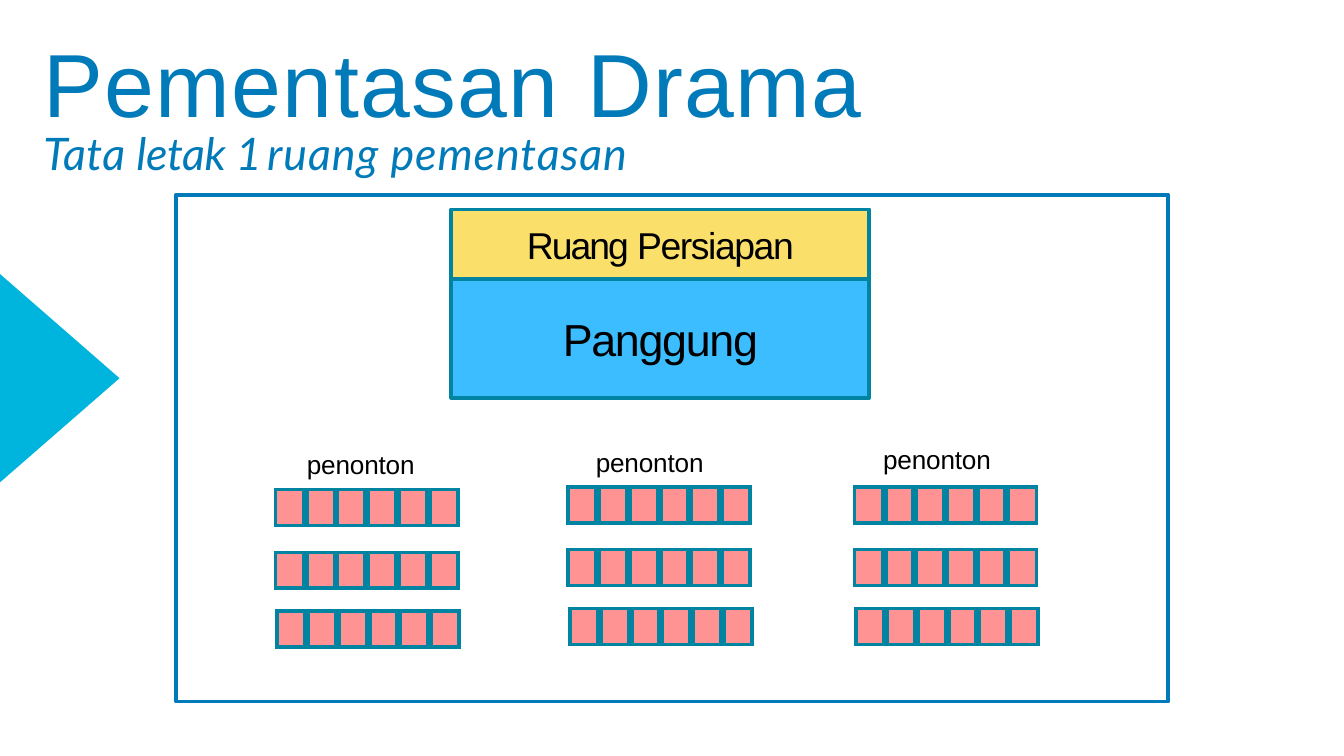
from lxml.etree import SubElement
from pptx import Presentation
from pptx.dml.color import RGBColor
from pptx.enum.shapes import MSO_SHAPE
from pptx.enum.text import MSO_ANCHOR, PP_ALIGN
from pptx.oxml.ns import qn
from pptx.util import Cm, Pt

BLUE = RGBColor(0x00, 0x7A, 0xB8)
CYAN = RGBColor(0x00, 0xB5, 0xDD)
TEAL = RGBColor(0x00, 0x84, 0xA1)
SKY = RGBColor(0x3B, 0xBD, 0xFF)
YELLOW = RGBColor(0xFA, 0xDF, 0x6A)
PINK = RGBColor(0xFF, 0x93, 0x93)
WHITE = RGBColor(0xFF, 0xFF, 0xFF)
BLACK = RGBColor(0x00, 0x00, 0x00)


class StageSlide:
    """Draws the elements of a theatre floor plan on one slide."""

    line_width = Pt(2)
    seat_widths = (0.56, 0.58, 0.58, 0.58, 0.58, 0.56)
    seat_height = 0.68
    outer_border = Pt(2.25)
    inner_border = Pt(4.25)

    def __init__(self, slide):
        self.slide = slide

    def fill_text(self, frame, runs, size, color, font="Arial", italic=False):
        paragraph = frame.paragraphs[0]
        paragraph.font.name = font
        paragraph.font.size = Pt(size)
        paragraph.font.italic = italic
        paragraph.font.color.rgb = color
        for text, spacing in runs:
            run = paragraph.add_run()
            run.text = text
            run._r.get_or_add_rPr().set("spc", str(round(spacing * 100)))
        return paragraph

    def text(self, left, top, width, height, runs, size, color, **style):
        shape = self.slide.shapes.add_textbox(Cm(left), Cm(top), Cm(width), Cm(height))
        frame = shape.text_frame
        frame.word_wrap = True
        frame.margin_left = Cm(0.03)
        frame.margin_top = Cm(0.06)
        frame.margin_right = frame.margin_bottom = 0
        self.fill_text(frame, runs, size, color, **style)

    def box(self, left, top, width, height, fill, line, runs=(), size=20):
        shape = self.slide.shapes.add_shape(
            MSO_SHAPE.RECTANGLE, Cm(left), Cm(top), Cm(width), Cm(height))
        shape.shadow.inherit = False
        shape.fill.solid()
        shape.fill.fore_color.rgb = fill
        shape.line.color.rgb = line
        shape.line.width = self.line_width
        if runs:
            frame = shape.text_frame
            frame.margin_left = frame.margin_top = 0
            frame.margin_right = frame.margin_bottom = 0
            frame.vertical_anchor = MSO_ANCHOR.MIDDLE
            self.fill_text(frame, runs, size, BLACK).alignment = PP_ALIGN.CENTER

    def arrow_tip(self, top, width, height, fill):
        builder = self.slide.shapes.build_freeform(Cm(0), Cm(top))
        builder.add_line_segments(
            [(Cm(0), Cm(top + height)), (Cm(width), Cm(top + height / 2))])
        shape = builder.convert_to_shape()
        shape.shadow.inherit = False
        shape.fill.solid()
        shape.fill.fore_color.rgb = fill
        shape.line.fill.background()

    def border(self, cell, side, width):
        line = SubElement(cell._tc.get_or_add_tcPr(), qn(f"a:ln{side}"), w=str(width))
        fill = SubElement(line, qn("a:solidFill"))
        SubElement(fill, qn("a:srgbClr"), val=str(TEAL))

    def seat_row(self, left, top):
        count = len(self.seat_widths)
        table = self.slide.shapes.add_table(
            1, count, Cm(left), Cm(top),
            Cm(sum(self.seat_widths)), Cm(self.seat_height)).table
        table.first_row = table.horz_banding = False
        for index, width in enumerate(self.seat_widths):
            table.columns[index].width = Cm(width)
            cell = table.cell(0, index)
            cell.margin_left = cell.margin_right = 0
            cell.margin_top = cell.margin_bottom = 0
            self.border(cell, "L", self.inner_border if index else self.outer_border)
            self.border(
                cell, "R",
                self.inner_border if index < count - 1 else self.outer_border)
            self.border(cell, "T", self.outer_border)
            self.border(cell, "B", self.outer_border)
            cell.fill.solid()
            cell.fill.fore_color.rgb = PINK
            SubElement(cell.text_frame.paragraphs[0]._p, qn("a:endParaRPr"), sz="1000")


def main():
    presentation = Presentation()
    presentation.slide_width = Cm(25.4)
    presentation.slide_height = Cm(14.29)
    stage = StageSlide(presentation.slides.add_slide(presentation.slide_layouts[6]))

    stage.arrow_tip(5.18, 2.26, 3.94, CYAN)
    stage.text(0.79, 0.46, 15.52, 2.11,
               [("Pementasan ", 0.8), ("Drama", 0.7)], 48, BLUE)
    stage.text(0.79, 2.31, 11.99, 1.09,
               [("Tata ", 0.2), ("letak ", -0.2), ("1 ", -2.8),
                ("ruang pementasan", 0.5)],
               24, BLUE, font="Lato", italic=True)
    stage.box(3.33, 3.68, 18.75, 9.58, WHITE, BLUE)
    stage.box(8.53, 5.28, 7.9, 2.24, SKY, TEAL, [("Panggung", -0.7)], 24)
    stage.box(8.53, 3.96, 7.9, 1.32, YELLOW, TEAL,
              [("Ruang ", -1.1), ("Persiapan", -0.8)], 20)

    blocks = [(5.21, 9.25, 5.77, 8.41), (10.74, 9.2, 11.23, 8.38),
              (16.15, 9.2, 16.66, 8.33)]
    row_offsets = [(0, 0), (0, 1.19), (0.03, 2.3)]
    for left, top, label_left, label_top in blocks:
        for shift, drop in row_offsets:
            stage.seat_row(left + shift, top + drop)
        stage.text(label_left, label_top, 2.13, 0.66, [("penonton", -0.1)], 14, BLACK)

    presentation.save("out.pptx")


if __name__ == "__main__":
    main()
